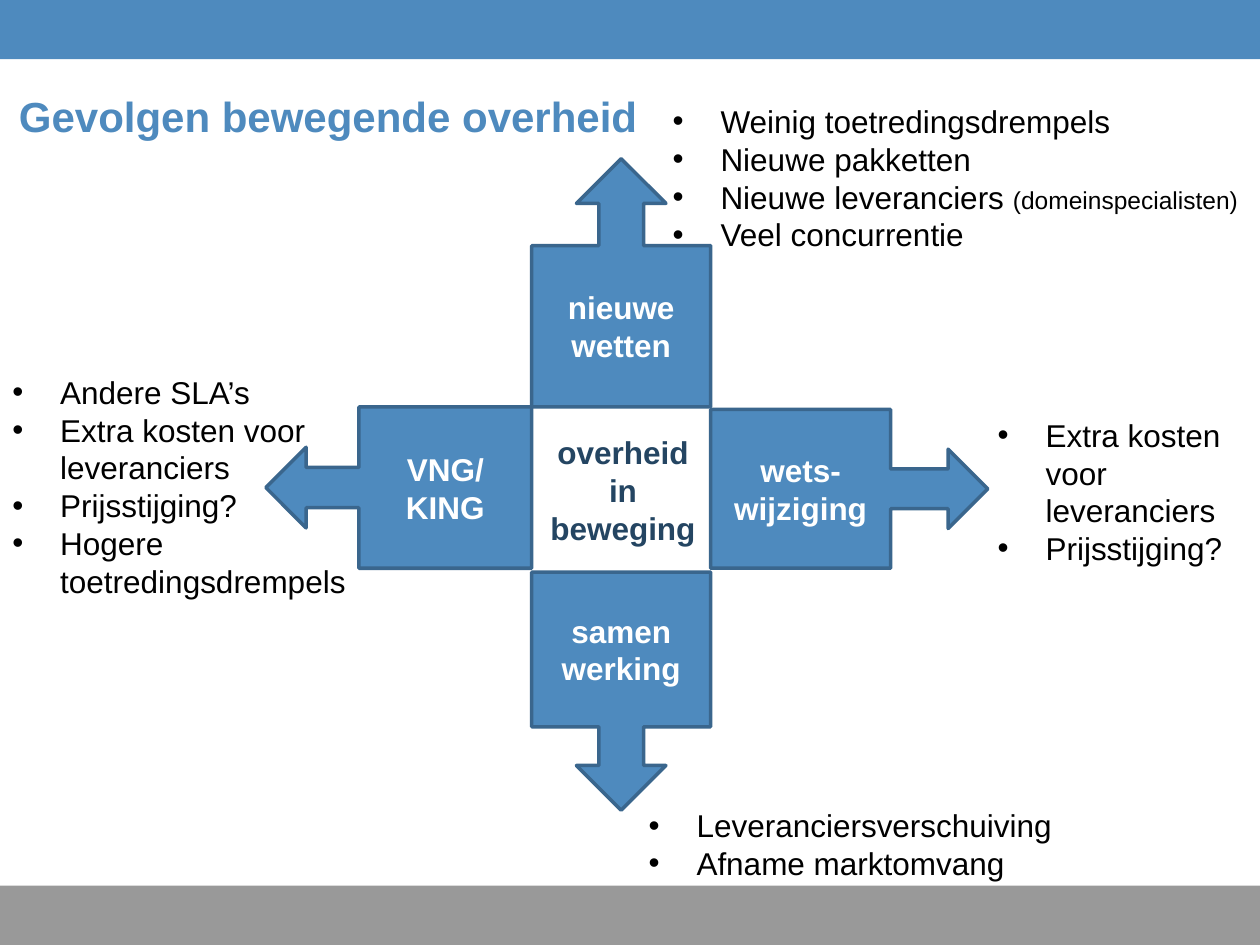
from lxml import etree
from pptx import Presentation
from pptx import util as u
from pptx.dml.color import RGBColor
from pptx.enum import shapes, text
from pptx.oxml.ns import qn

WIDTH, HEIGHT, BAND = 10, 7.5, 0.47
BLUE, EDGE, NAVY, GREY = "4E8ABE", "3A668D", "244562", "999999"
WHITE, BLACK = "FFFFFF", "000000"
INDENT = u.Inches(0.38)

TITLE = "Gevolgen bewegende overheid"
CENTRE = ["overheid", "in", "beweging"]
SHAPE = shapes.MSO_SHAPE

# Arrow callouts around the centre: shape, (left, top, width, height), lines
ARROWS = [
    (SHAPE.RIGHT_ARROW_CALLOUT, (5.64, 3.25, 2.2, 1.26), ["wets-wijziging"]),
    (SHAPE.UP_ARROW_CALLOUT, (4.22, 1.26, 1.42, 1.97), ["nieuwe", "wetten"]),
    (SHAPE.DOWN_ARROW_CALLOUT, (4.22, 4.54, 1.42, 1.89), ["samen", "werking"]),
    (SHAPE.LEFT_ARROW_CALLOUT, (2.11, 3.23, 2.11, 1.28), ["VNG/", "KING"]),
]

# Consequences per arrow: (left, top, width, height), wrap, items;
# an item may be a pair of normal text and a smaller remark
CONSEQUENCES = [
    ((5.24, 0.76, 4.72, 1.31), False,
     ["Weinig toetredingsdrempels", "Nieuwe pakketten",
      ("Nieuwe leveranciers ", "(domeinspecialisten)"), "Veel concurrentie"]),
    ((5.05, 6.35, 3.43, 0.71), False,
     ["Leveranciersverschuiving", "Afname marktomvang"]),
    ((7.82, 3.25, 2.13, 1.31), True,
     ["Extra kosten voor leveranciers", "Prijsstijging?"]),
    ((0, 2.91, 2.87, 1.92), True,
     ["Andere SLA’s", "Extra kosten voor leveranciers", "Prijsstijging?",
      "Hogere toetredingsdrempels"]),
]


def colour(value):
    return RGBColor.from_string(value)


def inches(place):
    return [u.Inches(length) for length in place]


def style(para, value, size=18, bold=False, align=text.PP_ALIGN.LEFT):
    para.alignment = align
    para.font.name = "Arial"
    para.font.size = u.Pt(size)
    para.font.bold = bold
    para.font.color.rgb = colour(value)


def add_bullet(para):
    props = para._p.get_or_add_pPr()
    props.set("marL", str(INDENT))
    props.set("indent", str(-INDENT))
    etree.SubElement(props, qn("a:buFont")).set("typeface", "Arial")
    etree.SubElement(props, qn("a:buChar")).set("char", "•")


def add_shape(slide, kind, place, fill, edge=None):
    shape = slide.shapes.add_shape(kind, *inches(place))
    shape.shadow.inherit = False
    shape.fill.solid()
    shape.fill.fore_color.rgb = colour(fill)
    if edge:
        shape.line.color.rgb = colour(edge)
        shape.line.width = u.Pt(2)
    else:
        shape.line.fill.background()
    return shape


def add_text_box(slide, place, wrap):
    frame = slide.shapes.add_textbox(*inches(place)).text_frame
    frame.word_wrap = wrap
    frame.auto_size = text.MSO_AUTO_SIZE.SHAPE_TO_FIT_TEXT
    return frame


def write_centred(frame, lines, value):
    frame.text = "\n".join(lines)
    for para in frame.paragraphs:
        style(para, value, bold=True, align=text.PP_ALIGN.CENTER)


def write_bullets(frame, items):
    for index, item in enumerate(items):
        para = frame.add_paragraph() if index else frame.paragraphs[0]
        add_bullet(para)
        style(para, BLACK)
        main, remark = item if isinstance(item, tuple) else (item, None)
        para.add_run().text = main
        if remark:
            span = para.add_run()
            span.text = remark
            span.font.size = u.Pt(14)


def main():
    deck = Presentation()
    deck.slide_width, deck.slide_height = inches((WIDTH, HEIGHT))
    slide = deck.slides.add_slide(deck.slide_layouts[5])

    # Bands along the bottom and top edges
    for top, fill in ((HEIGHT - BAND, GREY), (0, BLUE)):
        add_shape(slide, SHAPE.RECTANGLE, (0, top, WIDTH, BAND), fill)

    # Cross of arrow callouts
    for kind, place, lines in ARROWS:
        callout = add_shape(slide, kind, place, BLUE, EDGE)
        callout.text_frame.word_wrap = True
        callout.text_frame.vertical_anchor = text.MSO_ANCHOR.MIDDLE
        write_centred(callout.text_frame, lines, WHITE)
    write_centred(add_text_box(slide, (4.26, 3.39, 1.37, 1.01), False),
                  CENTRE, NAVY)

    # Bullet lists beside the arrows
    for place, wrap, items in CONSEQUENCES:
        write_bullets(add_text_box(slide, place, wrap), items)

    # Title
    title = slide.shapes.title
    title.left, title.top, title.width, title.height = inches(
        (0.05, 0.62, 5.15, 0.51))
    frame = title.text_frame
    frame.text = TITLE
    frame.word_wrap = False
    frame.auto_size = text.MSO_AUTO_SIZE.SHAPE_TO_FIT_TEXT
    frame.vertical_anchor = text.MSO_ANCHOR.TOP
    style(frame.paragraphs[0], BLUE, size=24, bold=True)
    frame.paragraphs[0].line_spacing = u.Pt(32)

    deck.save("out.pptx")


if __name__ == "__main__":
    main()
